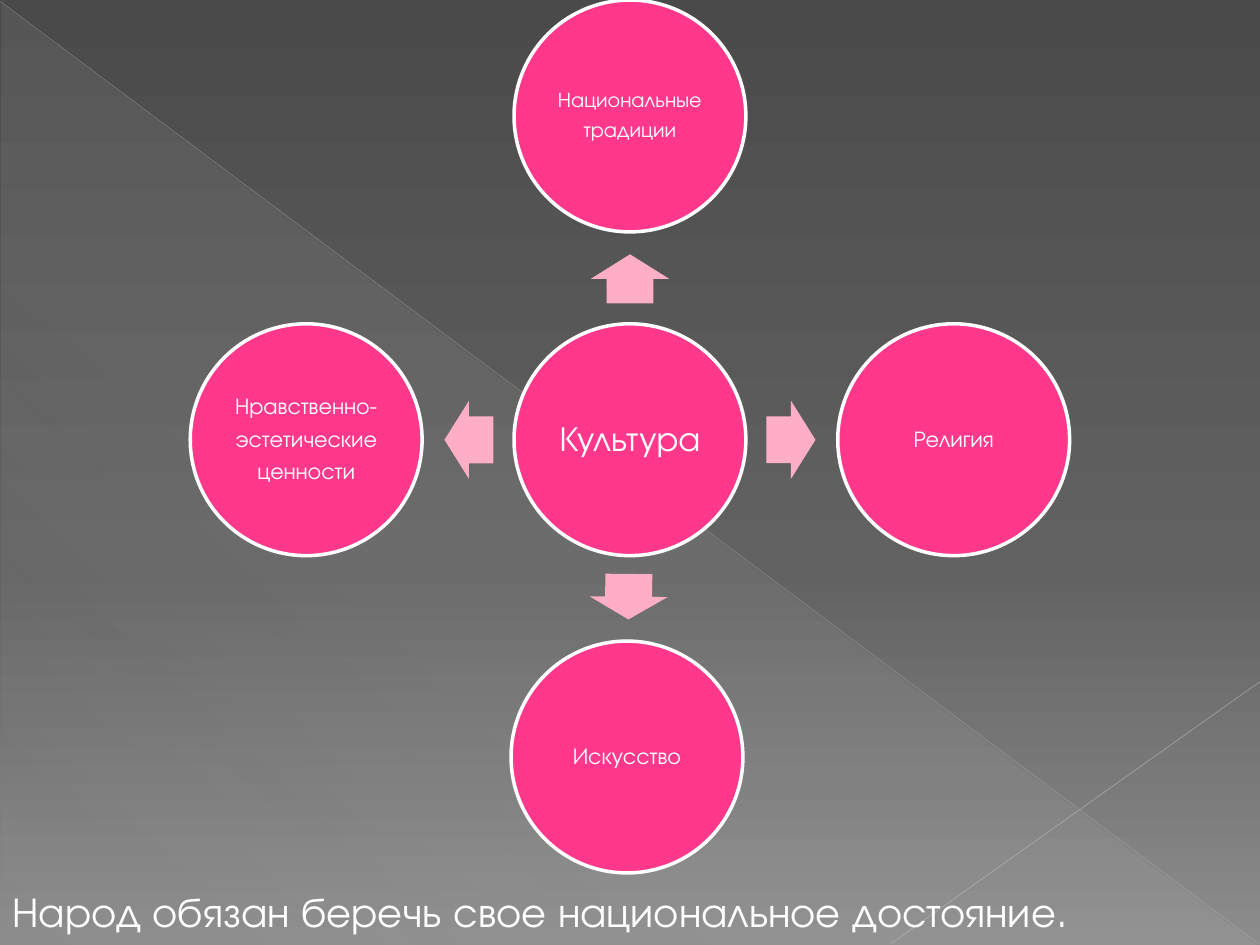
from dataclasses import dataclass

from lxml.etree import SubElement
from pptx import Presentation
from pptx.dml.color import RGBColor
from pptx.enum.shapes import MSO_CONNECTOR, MSO_SHAPE
from pptx.enum.text import MSO_ANCHOR, MSO_AUTO_SIZE, PP_ALIGN
from pptx.oxml.ns import qn
from pptx.util import Pt


@dataclass(frozen=True)
class Theme:
    font: str = "TeX Gyre Adventor"
    text: str = "FFFFFF"
    circle: str = "FF388C"
    arrow: str = "FFAFC5"
    backdrop: tuple = ((0, "4A4A4A", 100), (60, "626262", 100), (100, "8C8C8C", 100))
    sheen: tuple = ((0, "D2D2D2", 10), (70, "D2D2D2", 8), (100, "D2D2D2", 1))
    hub_size: float = 20
    caption_size: float = 24


@dataclass(frozen=True)
class Ray:
    start: tuple
    end: tuple
    color: str
    width: float
    opacity: int


@dataclass(frozen=True)
class Spoke:
    lines: tuple
    size: float
    circle_offset: tuple
    arrow_offset: tuple
    arrow_length: float
    rotation: float


THEME = Theme()
W, H = 720, 540
HUB = (360, 251.3)
DIAMETER = 132.5
ARROW_HEIGHT = 44.7

RAYS = (
    Ray((0, 0.7), (719.3, 539.3), "BFBFBF", 0.39, 35),
    Ray((720, 389.5), (509, 539.3), "C6C6C6", 0.47, 45),
)
SPOKES = (
    Spoke(("Национальные", "традиции"), 12, (0, -185), (0, -92), 28, 270),
    Spoke(("Религия",), 13, (185, 0), (92, 0), 28, 0),
    Spoke(("Искусство",), 13, (-1.7, 181.3), (-0.8, 89.7), 26, 90.6),
    Spoke(("Нравственно-", "эстетические", "ценности"), 13, (-185, 0), (-92, 0), 28, 180),
)


def set_alpha(clr, opacity: int) -> None:
    SubElement(clr, qn("a:alpha")).set("val", str(opacity * 1000))


def set_gradient(fill, parent, stops: tuple, angle: float) -> None:
    fill.gradient()
    grad = parent.find(".//" + qn("a:gradFill"))
    for child in list(grad):
        grad.remove(child)
    gs_lst = SubElement(grad, qn("a:gsLst"))
    for pos, color, opacity in stops:
        gs = SubElement(gs_lst, qn("a:gs"))
        gs.set("pos", str(pos * 1000))
        clr = SubElement(gs, qn("a:srgbClr"))
        clr.set("val", color)
        if opacity < 100:
            set_alpha(clr, opacity)
    lin = SubElement(grad, qn("a:lin"))
    lin.set("ang", str(int(angle * 60000)))
    lin.set("scaled", "0")


def add_run(p, text: str, size: float) -> None:
    r = p.add_run()
    r.text = text
    r.font.name = THEME.font
    r.font.size = Pt(size)
    r.font.color.rgb = RGBColor.from_string(THEME.text)


def add_ray(s, ray: Ray) -> None:
    cx = s.shapes.add_connector(
        MSO_CONNECTOR.STRAIGHT, *(Pt(v) for v in ray.start + ray.end)
    )
    cx.line.width = Pt(ray.width)
    cx.line.color.rgb = RGBColor.from_string(ray.color)
    sp_pr = cx.element.spPr
    set_alpha(sp_pr.find(".//" + qn("a:srgbClr")), ray.opacity)
    SubElement(sp_pr, qn("a:effectLst"))


def add_centred(s, kind, offset: tuple, width: float, height: float, color: str):
    x, y = HUB[0] + offset[0], HUB[1] + offset[1]
    sp = s.shapes.add_shape(
        kind, Pt(x - width / 2), Pt(y - height / 2), Pt(width), Pt(height)
    )
    sp.shadow.inherit = False
    sp.fill.solid()
    sp.fill.fore_color.rgb = RGBColor.from_string(color)
    sp.line.fill.background()
    return sp


def add_circle(s, lines: tuple, size: float, offset: tuple) -> None:
    sp = add_centred(s, MSO_SHAPE.OVAL, offset, DIAMETER, DIAMETER, THEME.circle)
    sp.line.color.rgb = RGBColor.from_string(THEME.text)
    sp.line.width = Pt(2)
    tf = sp.text_frame
    tf.word_wrap = True
    tf.vertical_anchor = MSO_ANCHOR.MIDDLE
    tf.margin_left = tf.margin_right = tf.margin_top = tf.margin_bottom = Pt(1.5)
    for i, line in enumerate(lines):
        p = tf.add_paragraph() if i else tf.paragraphs[0]
        p.alignment = PP_ALIGN.CENTER
        p.line_spacing = 0.9
        p.space_after = Pt(size * 0.35)
        add_run(p, line, size)


def add_spoke(s, spoke: Spoke) -> None:
    arrow = add_centred(
        s, MSO_SHAPE.RIGHT_ARROW, spoke.arrow_offset,
        spoke.arrow_length, ARROW_HEIGHT, THEME.arrow,
    )
    arrow.adjustments[0] = 0.6
    arrow.adjustments[1] = 0.5
    arrow.rotation = spoke.rotation
    add_circle(s, spoke.lines, spoke.size, spoke.circle_offset)


def add_backdrop(s) -> None:
    set_gradient(s.background.fill, s.element, THEME.backdrop, 90)
    sp = s.shapes.add_shape(
        MSO_SHAPE.RIGHT_TRIANGLE, Pt(0.7), Pt(1.4), Pt(718.6), Pt(538.6)
    )
    sp.shadow.inherit = False
    sp.line.fill.background()
    set_gradient(sp.fill, sp.element, THEME.sheen, 133)
    for ray in RAYS:
        add_ray(s, ray)


def add_caption(s, text: str) -> None:
    sp = s.shapes.title
    sp.left, sp.top, sp.width, sp.height = Pt(0), Pt(502.6), Pt(W), Pt(36)
    s.shapes.element.append(sp.element)
    tf = sp.text_frame
    tf.word_wrap = True
    tf.auto_size = MSO_AUTO_SIZE.NONE
    tf.vertical_anchor = MSO_ANCHOR.TOP
    p = tf.paragraphs[0]
    p.alignment = PP_ALIGN.LEFT
    add_run(p, text, THEME.caption_size)


def main() -> None:
    prs = Presentation()
    prs.slide_width, prs.slide_height = Pt(W), Pt(H)
    s = prs.slides.add_slide(prs.slide_layouts[5])
    add_backdrop(s)
    add_circle(s, ("Культура",), THEME.hub_size, (0, 0))
    for spoke in SPOKES:
        add_spoke(s, spoke)
    add_caption(s, "Народ обязан беречь свое национальное достояние.")
    prs.save("out.pptx")


if __name__ == "__main__":
    main()
